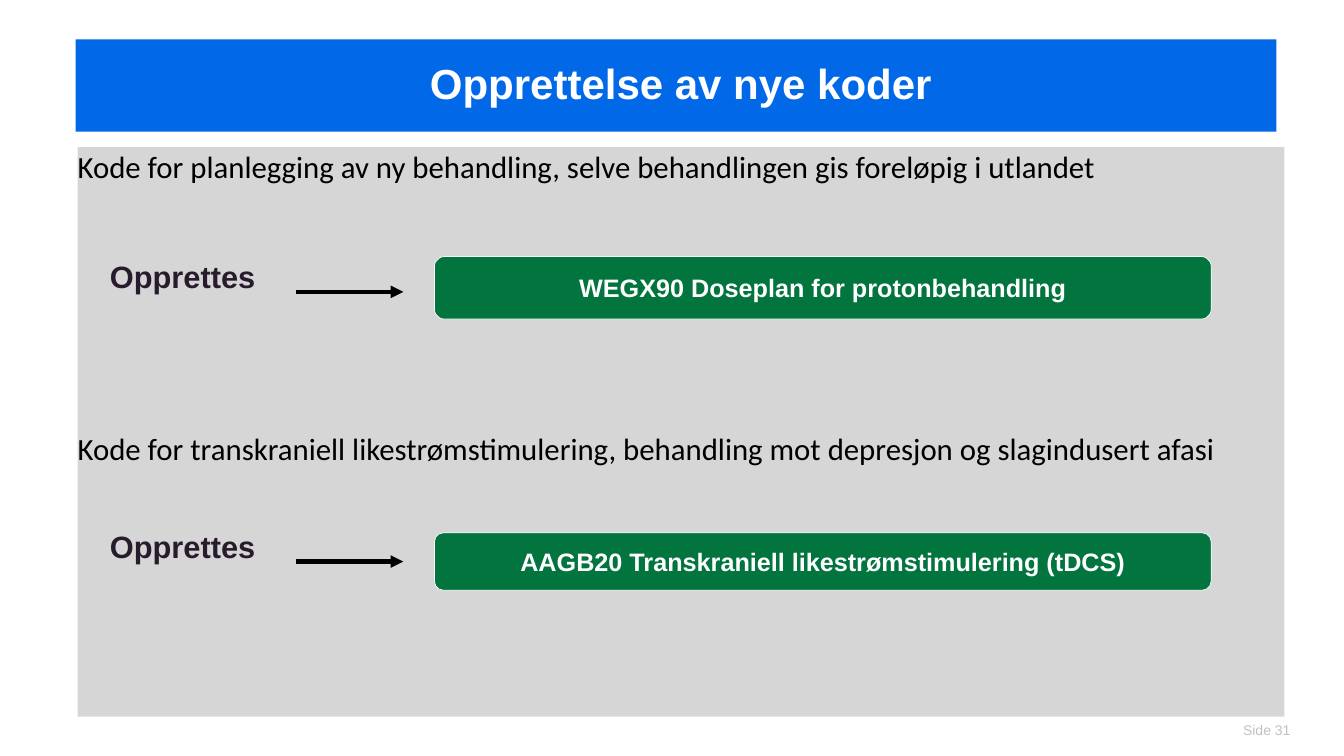
from dataclasses import dataclass

from lxml import etree
from pptx import Presentation
from pptx.dml.color import RGBColor
from pptx.enum.shapes import MSO_CONNECTOR, MSO_SHAPE
from pptx.enum.text import MSO_ANCHOR, PP_ALIGN
from pptx.oxml.ns import qn
from pptx.util import Cm, Pt

RECTANGLE = MSO_SHAPE.RECTANGLE
ROUNDED = MSO_SHAPE.ROUNDED_RECTANGLE
STRAIGHT = MSO_CONNECTOR.STRAIGHT
TOP, MIDDLE = MSO_ANCHOR.TOP, MSO_ANCHOR.MIDDLE
LEFT, CENTER, RIGHT = PP_ALIGN.LEFT, PP_ALIGN.CENTER, PP_ALIGN.RIGHT


@dataclass(frozen=True)
class Theme:
    heading_font: str = "Arial"
    body_font: str = "Calibri"
    blue: str = "0169E8"
    green: str = "02743E"
    grey: str = "D6D6D6"
    pale_grey: str = "C1C1C1"
    plum: str = "281C2C"
    black: str = "000000"
    white: str = "FFFFFF"
    title_size: int = 60
    body_size: int = 44
    code_size: int = 36
    footer_size: int = 20


@dataclass(frozen=True)
class Box:
    """Position and size in centimetres."""
    left: float
    top: float
    width: float
    height: float

    def lengths(self) -> tuple:
        return Cm(self.left), Cm(self.top), Cm(self.width), Cm(self.height)


@dataclass(frozen=True)
class NewCode:
    reason: str
    code: str
    code_top: float
    code_height: float
    arrow_y: float


THEME = Theme()
TITLE = Box(3.81, 1.98, 60.5, 4.65)
PANEL = Box(3.91, 7.42, 60.81, 28.7)
FOOTER = Box(61.04, 36.3, 3.99, 1.02)
REASON_GAP = 350.5  # points between the two reasons
CODE_LEFT, CODE_WIDTH = 21.89, 39.14
ARROW_START, ARROW_END = 14.91, 20.32
LABEL_LEFT, LABEL_WIDTH, LABEL_HEIGHT = 4.02, 12.04, 4.95
LABEL_RISE = 2.63  # label top above its arrow

NEW_CODES = [
    NewCode("Kode for planlegging av ny behandling, selve behandlingen gis "
            "foreløpig i utlandet",
            "WEGX90 Doseplan for protonbehandling", 12.93, 3.15, 14.71),
    NewCode("Kode for transkraniell likestrømstimulering, behandling mot "
            "depresjon og slagindusert afasi",
            "AAGB20 Transkraniell likestrømstimulering (tDCS)", 26.85, 2.9, 28.3),
]


def write_text(shape, *lines: str, size: int, color: str,
               font: str = THEME.heading_font, bold: bool = False,
               align=LEFT, anchor=TOP, insets: tuple = (0, 0, 0, 0),
               gap: float = 0, line_spacing: float = 1.0) -> None:
    """Fill a shape with paragraphs; insets run left, top, right, bottom in cm."""
    frame = shape.text_frame
    frame.word_wrap = True
    frame.vertical_anchor = anchor
    (frame.margin_left, frame.margin_top,
     frame.margin_right, frame.margin_bottom) = map(Cm, insets)
    for index, line in enumerate(lines):
        paragraph = frame.add_paragraph() if index else frame.paragraphs[0]
        if index:
            paragraph.space_before = Pt(gap)
        paragraph.alignment = align
        paragraph.line_spacing = line_spacing
        run = paragraph.add_run()
        run.text = line
        run.font.name = font
        run.font.size = Pt(size)
        run.font.bold = bold
        run.font.color.rgb = RGBColor.from_string(color)


def add_filled(slide, kind, box: Box, fill: str, outline: str = ""):
    shape = slide.shapes.add_shape(kind, *box.lengths())
    shape.shadow.inherit = False
    shape.fill.solid()
    shape.fill.fore_color.rgb = RGBColor.from_string(fill)
    if outline:
        shape.line.color.rgb = RGBColor.from_string(outline)
        shape.line.width = Pt(1)
    else:
        shape.line.fill.background()
    return shape


def add_arrow(slide, y: float) -> None:
    arrow = slide.shapes.add_connector(
        STRAIGHT, Cm(ARROW_START), Cm(y), Cm(ARROW_END), Cm(y))
    arrow.line.color.rgb = RGBColor.from_string(THEME.black)
    arrow.line.width = Pt(6)
    etree.SubElement(arrow.line._get_or_add_ln(), qn("a:tailEnd"), type="triangle")
    etree.SubElement(arrow._element.spPr, qn("a:effectLst"))


def add_new_code(slide, item: NewCode) -> None:
    """Draw the label, the arrow and the green code box of one row."""
    code_box = Box(CODE_LEFT, item.code_top, CODE_WIDTH, item.code_height)
    code = add_filled(slide, ROUNDED, code_box, THEME.green, THEME.white)
    code.adjustments[0] = 0.16
    write_text(code, item.code, size=THEME.code_size, color=THEME.white,
               bold=True, align=CENTER, anchor=MIDDLE, insets=(0.2,) * 4)
    add_arrow(slide, item.arrow_y)
    label_box = Box(LABEL_LEFT, item.arrow_y - LABEL_RISE, LABEL_WIDTH, LABEL_HEIGHT)
    label = slide.shapes.add_textbox(*label_box.lengths())
    write_text(label, "Opprettes", size=THEME.body_size, color=THEME.plum,
               bold=True, insets=(1.52,) * 4)


def main() -> None:
    deck = Presentation()
    deck.slide_width, deck.slide_height = Cm(67.72), Cm(38.1)
    slide = deck.slides.add_slide(deck.slide_layouts[6])

    footer = slide.shapes.add_textbox(*FOOTER.lengths())
    write_text(footer, "Side 31", size=THEME.footer_size, color=THEME.pale_grey,
               align=RIGHT, anchor=MIDDLE)

    panel = add_filled(slide, RECTANGLE, PANEL, THEME.grey)
    write_text(panel, *(item.reason for item in NEW_CODES), size=THEME.body_size,
               color=THEME.black, font=THEME.body_font, gap=REASON_GAP)

    title = add_filled(slide, RECTANGLE, TITLE, THEME.blue)
    write_text(title, "Opprettelse av nye koder", size=THEME.title_size,
               color=THEME.white, bold=True, align=CENTER, anchor=MIDDLE,
               insets=(0.5, 0, 0, 0), line_spacing=0.9)

    for item in NEW_CODES:
        add_new_code(slide, item)

    deck.save("out.pptx")


if __name__ == "__main__":
    main()
